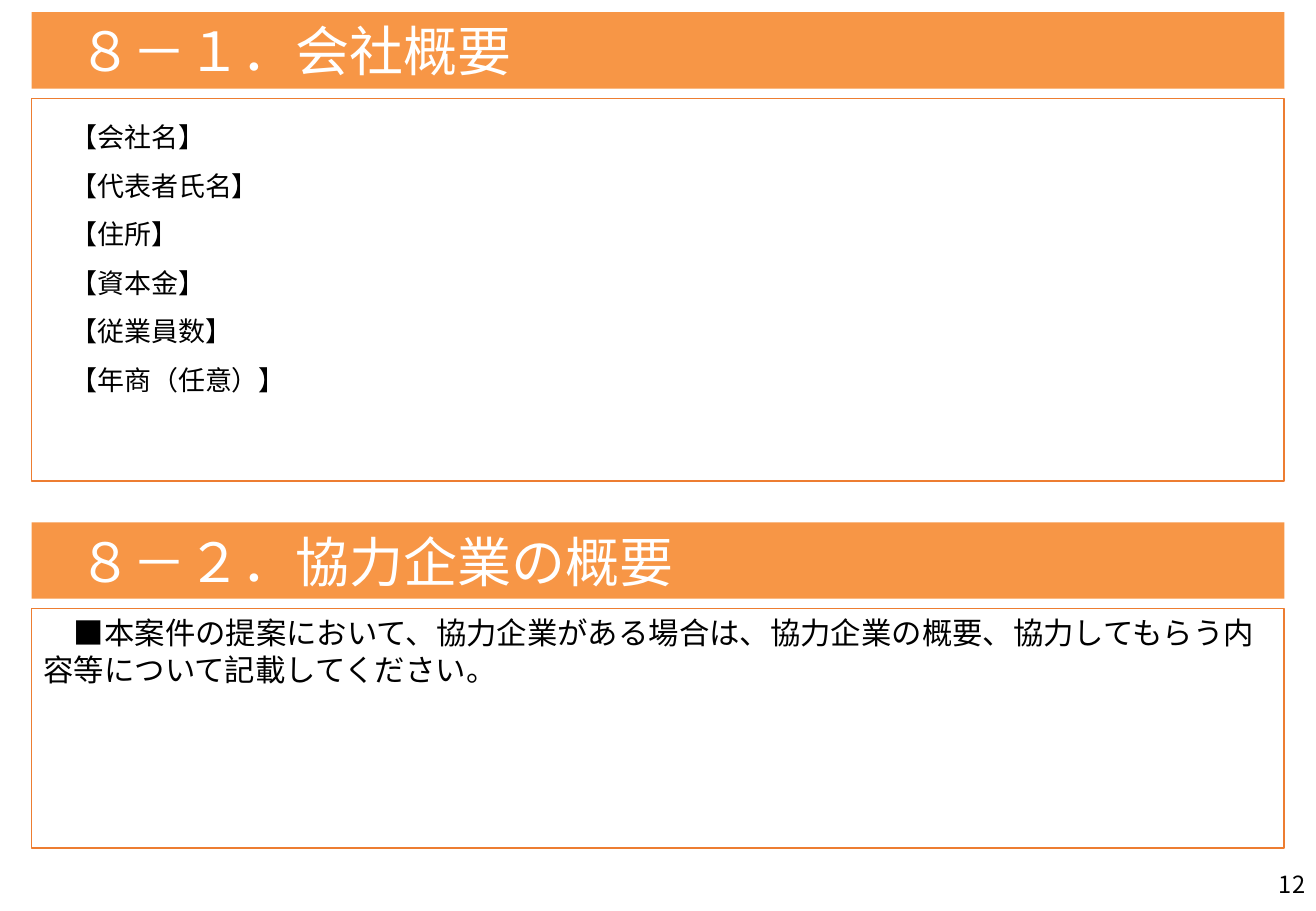
from dataclasses import dataclass

from lxml.etree import SubElement
from pptx import Presentation
from pptx.dml.color import RGBColor
from pptx.enum.shapes import MSO_SHAPE as Shape
from pptx.enum.text import MSO_ANCHOR as Anchor, PP_ALIGN as Align
from pptx.oxml.ns import qn
from pptx.util import Inches, Pt


@dataclass(frozen=True)
class Theme:
    font: str = "Noto Sans CJK JP"
    band: RGBColor = RGBColor(0xF7, 0x96, 0x46)
    border: RGBColor = RGBColor(0xED, 0x7D, 0x31)
    paper: RGBColor = RGBColor(0xFF, 0xFF, 0xFF)
    ink: RGBColor = RGBColor(0, 0, 0)
    heading: int = 32
    instruction: int = 18
    item: int = 16
    page: int = 14


THEME = Theme()
MARGIN, CONTENT_WIDTH = 0.26, 10.31
BAND_HEIGHT, BAND_GAP = 0.63, 0.08

COMPANY_ITEMS = [
    "【会社名】",
    "【代表者氏名】",
    "【住所】",
    "【資本金】",
    "【従業員数】",
    "【年商（任意）】",
]
PARTNER_INSTRUCTION = [
    "■本案件の提案において、協力企業がある場合は、協力企業の概要、"
    "協力してもらう内容等について記載してください。"
]


def write_lines(frame, lines, size, color, align=Align.LEFT, spacing=1.0, indent=0):
    frame.word_wrap = True
    for number, line in enumerate(lines):
        paragraph = frame.add_paragraph() if number else frame.paragraphs[0]
        paragraph.text = line
        paragraph.alignment = align
        paragraph.line_spacing = spacing
        font = paragraph.font
        font.size = Pt(size)
        font.name = THEME.font
        font.color.rgb = color
        properties = paragraph._p.get_or_add_pPr()
        properties.set("indent", str(Pt(indent)))
        defaults = properties.find(qn("a:defRPr"))
        SubElement(defaults, qn("a:ea"), typeface=THEME.font)


def add_rectangle(slide, left, top, width, height, fill):
    rectangle = slide.shapes.add_shape(
        Shape.RECTANGLE, Inches(left), Inches(top), Inches(width), Inches(height)
    )
    rectangle.shadow.inherit = False
    rectangle.fill.solid()
    rectangle.fill.fore_color.rgb = fill
    return rectangle


def add_heading(slide, left, top, width, title):
    band = add_rectangle(slide, left, top, width, BAND_HEIGHT, THEME.band)
    band.line.fill.background()
    frame = band.text_frame
    frame.vertical_anchor = Anchor.MIDDLE
    frame.margin_left = Inches(0.39)
    frame.margin_top = frame.margin_right = frame.margin_bottom = 0
    write_lines(frame, [title], THEME.heading, THEME.paper)


def add_section(slide, left, top, width, height, title, lines, size, spacing=1.0):
    add_heading(slide, left, top, width, title)
    body_offset = BAND_HEIGHT + BAND_GAP
    body = add_rectangle(
        slide, left, top + body_offset, width, height - body_offset, THEME.paper
    )
    body.line.color.rgb = THEME.border
    body.line.width = Pt(1)
    body.text_frame.vertical_anchor = Anchor.TOP
    write_lines(body.text_frame, lines, size, THEME.ink, spacing=spacing, indent=size)


def add_page_number(slide, left, top, width, height, number):
    page = slide.shapes.add_textbox(
        Inches(left), Inches(top), Inches(width), Inches(height)
    )
    page.text_frame.vertical_anchor = Anchor.MIDDLE
    write_lines(page.text_frame, [number], THEME.page, THEME.ink, align=Align.RIGHT)


def main():
    deck = Presentation()
    deck.slide_width, deck.slide_height = Inches(10.83), Inches(7.5)
    slide = deck.slides.add_slide(deck.slide_layouts[6])
    add_section(slide, MARGIN, 0.1, CONTENT_WIDTH, 3.86,
                "８－１．会社概要", COMPANY_ITEMS, THEME.item, spacing=1.5)
    add_section(slide, MARGIN, 4.3, CONTENT_WIDTH, 2.68,
                "８－２．協力企業の概要", PARTNER_INSTRUCTION, THEME.instruction)
    add_page_number(slide, 8.4, 7.08, 2.44, 0.4, "12")
    deck.save("out.pptx")


if __name__ == "__main__":
    main()
